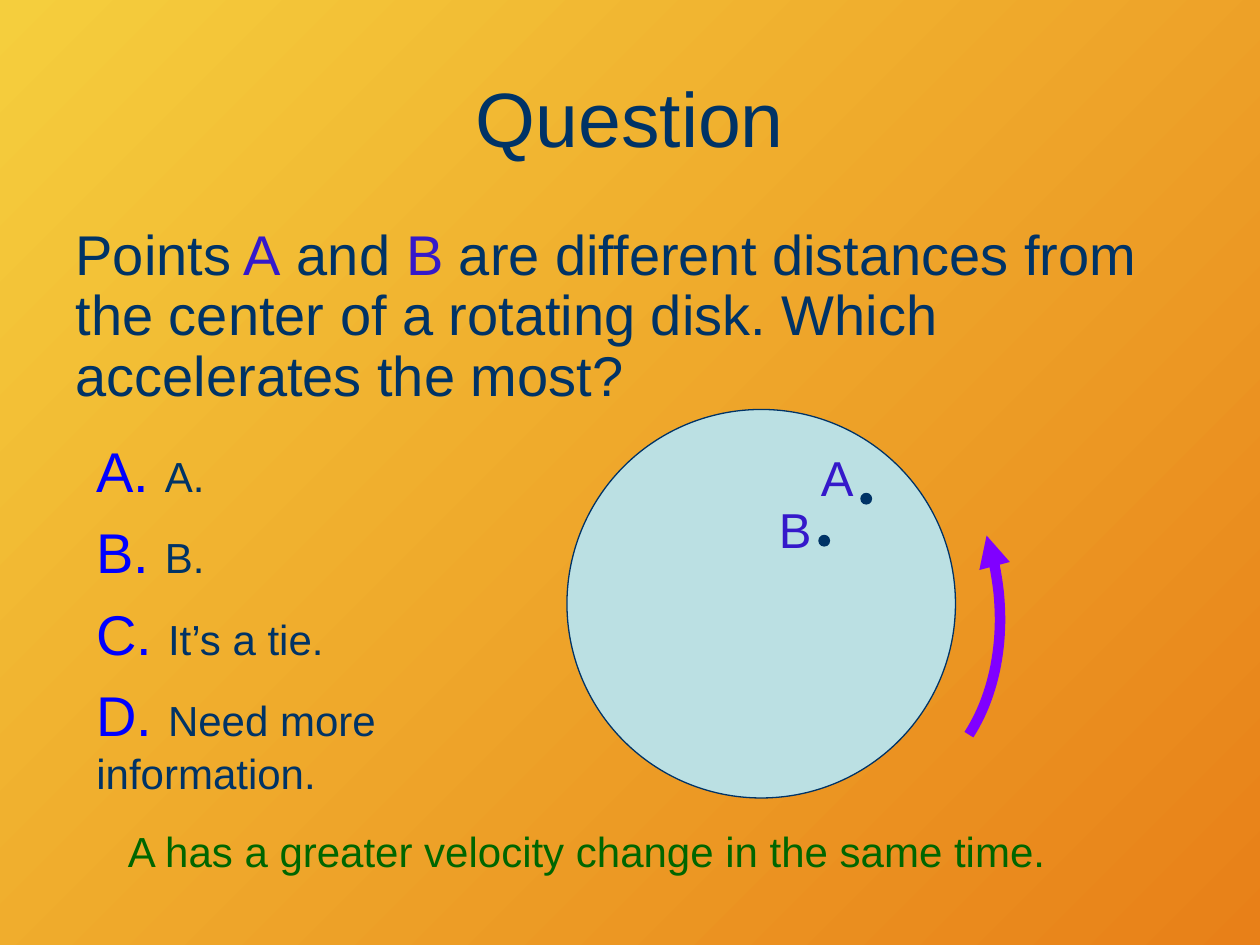
"""Build the rotating disk question slide."""
from dataclasses import dataclass

from lxml import etree
from pptx import Presentation
from pptx import util as u
from pptx.dml.color import RGBColor
from pptx.enum import shapes, text
from pptx.oxml.ns import qn


@dataclass(frozen=True)
class Theme:
    """Colours, type sizes and font of the slide."""
    font: str = "Arial"
    navy: str = "003366"
    violet: str = "3519CA"
    blue: str = "0000FF"
    green: str = "006600"
    disk: str = "BBE0E3"
    arrow: str = "8000FF"
    background: tuple = ("F5CE3D", "E88018")
    title: int = 44
    large: int = 32
    label: int = 28
    small: int = 24


class QuestionSlide:
    """Hold the theme and the slide, and add elements to it."""

    def __init__(self, slide, theme):
        """Start drawing directly on the slide."""
        self.slide, self.theme, self.canvas = slide, theme, slide.shapes

    def background(self):
        """Fill the background with a diagonal gradient."""
        fill = self.slide.background.fill
        fill.gradient()
        fill.gradient_angle = 315
        for stop, colour in zip(fill.gradient_stops, self.theme.background):
            stop.color.rgb = RGBColor.from_string(colour)

    def group(self):
        """Send the following elements to a new group."""
        self.canvas = self.slide.shapes.add_group_shape().shapes

    def set_words(self, paragraph, pieces, size=None, align=text.PP_ALIGN.LEFT):
        """Put (words, colour[, size]) pieces into one paragraph."""
        paragraph.alignment = align
        paragraph.font.name = self.theme.font
        if size:
            paragraph.font.size = u.Pt(size)
        colours = {piece[1] for piece in pieces}
        if len(colours) == 1:
            paragraph.font.color.rgb = RGBColor.from_string(*colours)
        for words, colour, *run_size in pieces:
            run = paragraph.add_run()
            run.text = words
            if len(colours) > 1:
                run.font.color.rgb = RGBColor.from_string(colour)
            if run_size:
                run.font.size = u.Pt(run_size[0])

    def placeholder(self, index, box, pieces, size, align, anchor):
        """Move a template placeholder and fill it without a bullet."""
        holder = self.slide.placeholders[index]
        holder.left, holder.top, holder.width, holder.height = map(u.Pt, box)
        frame = holder.text_frame
        frame.auto_size = text.MSO_AUTO_SIZE.NONE
        frame.vertical_anchor = anchor
        paragraph = frame.paragraphs[0]
        self.set_words(paragraph, pieces, size, align)
        paragraph.space_before = u.Pt(0)
        properties = paragraph._p.get_or_add_pPr()
        properties.set("marL", "0")
        properties.set("indent", "0")
        properties.insert_element_before(
            etree.Element(qn("a:buNone")), "a:tabLst", "a:defRPr", "a:extLst")
        return paragraph

    def textbox(self, box, lines, size=None, gap=0):
        """Add a wrapped text box with one paragraph for each line."""
        frame = self.canvas.add_textbox(*map(u.Pt, box)).text_frame
        frame.word_wrap = True
        for number, pieces in enumerate(lines):
            paragraph = frame.add_paragraph() if number else frame.paragraphs[0]
            self.set_words(paragraph, pieces, size)
            paragraph.space_before = u.Pt(gap if number else 0)

    def circle(self, left, top, diameter, colour):
        """Add a filled circle with a thin outline."""
        circle = self.canvas.add_shape(
            shapes.MSO_SHAPE.OVAL, *map(u.Pt, (left, top, diameter, diameter)))
        circle.shadow.inherit = False
        circle.fill.solid()
        circle.fill.fore_color.rgb = RGBColor.from_string(colour)
        circle.line.color.rgb = RGBColor.from_string(self.theme.navy)
        circle.line.width = u.Pt(0.75)

    def curved_arrow(self, controls, colour, steps=32):
        """Draw an arrow along a cubic Bézier curve."""
        def point(t):
            weights = ((1 - t) ** 3, 3 * t * (1 - t) ** 2, 3 * t * t * (1 - t), t ** 3)
            return tuple(u.Pt(sum(w * c for w, c in zip(weights, axis)))
                         for axis in zip(*controls))

        start, *rest = (point(step / steps) for step in range(steps + 1))
        outline = self.canvas.build_freeform(*start)
        outline.add_line_segments(rest, close=False)
        arrow = outline.convert_to_shape()
        arrow.shadow.inherit = False
        arrow.fill.background()
        arrow.line.color.rgb = RGBColor.from_string(colour)
        arrow.line.width = u.Pt(6)
        etree.SubElement(arrow.line._get_or_add_ln(), qn("a:tailEnd"), type="triangle")


def main():
    """Compose and save the slide."""
    deck = Presentation()
    deck.slide_width, deck.slide_height = u.Pt(720), u.Pt(540)
    theme = Theme()
    page = QuestionSlide(deck.slides.add_slide(deck.slide_layouts[1]), theme)
    page.background()

    page.placeholder(0, (36, 21.6, 648, 90), [("Question", theme.navy)], theme.title,
                     text.PP_ALIGN.CENTER, text.MSO_ANCHOR.MIDDLE)
    question = page.placeholder(1, (36, 126, 648, 120), [
        ("Points", theme.navy), (" A", theme.violet), (" and ", theme.navy),
        ("B", theme.violet),
        (" are different distances from the center of a rotating disk. "
         "Which accelerates the most?", theme.navy),
    ], theme.large, text.PP_ALIGN.LEFT, text.MSO_ANCHOR.TOP)
    question.line_spacing = 0.9

    answers = ("A.", "B.", "It’s a tie.", "Need more information.")
    page.textbox((48, 246, 204, 212), [
        [(f"{letter}. ", theme.blue, theme.large), (answer, theme.navy, theme.small)]
        for letter, answer in zip("ABCD", answers)
    ], gap=8)
    page.textbox((66, 468, 576, 36),
                 [[("A has a greater velocity change in the same time.", theme.green)]],
                 theme.small)

    page.group()
    page.curved_arrow(((553.7, 419.8), (571, 393.1), (578.2, 350.6), (563.8, 306)),
                      theme.arrow)
    page.circle(324, 234, 222, theme.disk)
    points = {"A": ((492, 282), (462, 252)), "B": ((468, 306), (438, 282))}
    for dot, _ in points.values():
        page.circle(*dot, 6, theme.navy)
    for name, (_, corner) in points.items():
        page.textbox((*corner, 36, 41), [[(name, theme.violet)]], theme.label)

    deck.save("out.pptx")


if __name__ == "__main__":
    main()
